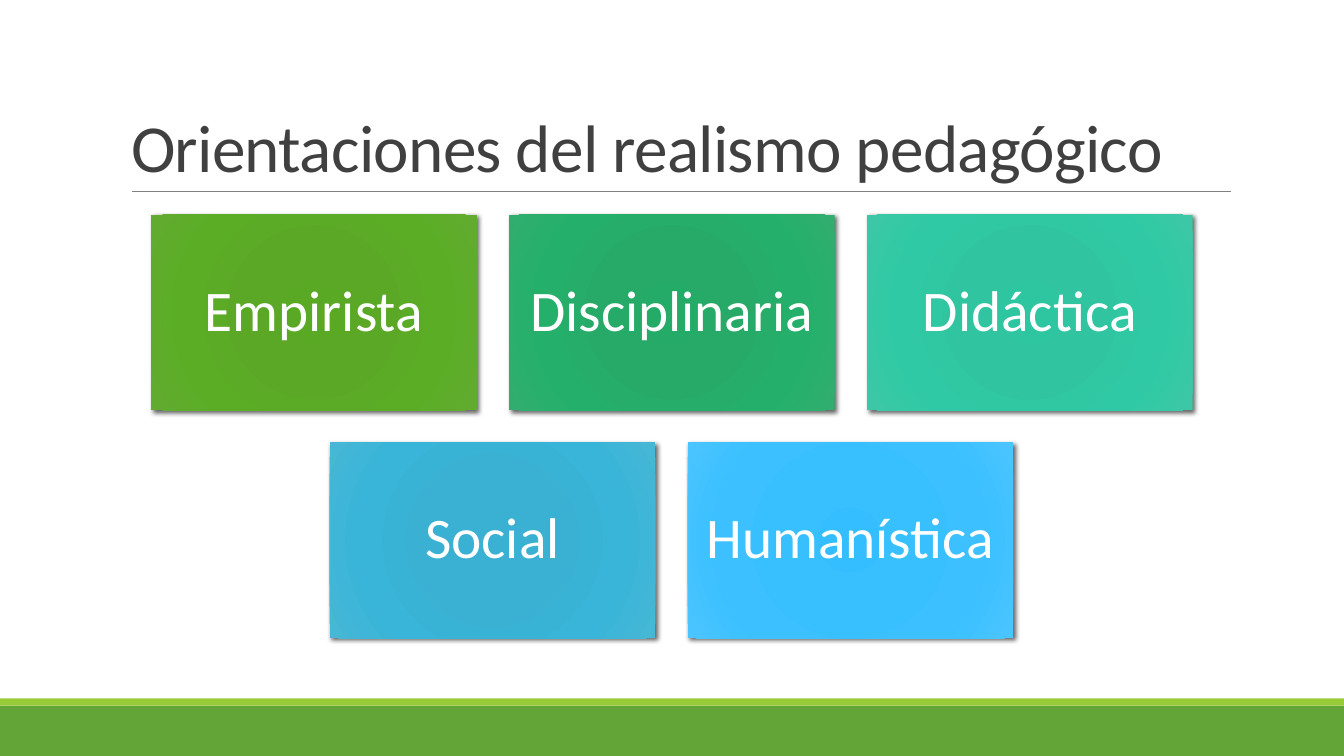
"""Build the slide on the orientations of pedagogical realism."""
from dataclasses import dataclass

import lxml.etree
import pptx
import pptx.dml.color
import pptx.enum.shapes
import pptx.enum.text
import pptx.oxml
import pptx.oxml.ns
import pptx.util

PX = 9144
PAGE_WIDTH, PAGE_HEIGHT = 1333, 750
CARD_WIDTH, CARD_HEIGHT, CARD_GAP, CARDS_TOP = 323, 194, 32, 213
STOP_POSITIONS = (0, 34, 70, 100)
CARD_ROWS = (
    (
        ("Empirista", ("59A924", "5BA827", "5BAD25", "62AB31")),
        ("Disciplinaria", ("24AB67", "27AA68", "24B06A", "31AD6F")),
        ("Didáctica", ("2EC5A1", "31C4A1", "2FCAA5", "3EC7A6")),
    ),
    (
        ("Social", ("37B1D3", "3AB1D2", "38B5D8", "48B7D5")),
        ("Humanística", ("34BEFF", "38BFFE", "3CC0FF", "4BC5FF")),
    ),
)


@dataclass(frozen=True)
class Theme:
    """Hold the colours and type sizes of the slide."""

    font: str = "Calibri"
    title_size: int = 48
    card_size: int = 41
    title: str = "404040"
    card_text: str = "FFFFFF"
    rule: str = "808080"
    band: str = "63A537"
    stripe: str = "99CB38"
    shadow: str = "000000"


THEME = Theme()


def px(*lengths):
    """Turn whole pixels into EMU."""
    return [pptx.util.Emu(length * PX) for length in lengths]


def rgb(code):
    """Return a colour from its hex code."""
    return pptx.dml.color.RGBColor.from_string(code)


def format_text(para, size, color, spacing):
    """Set the font and line spacing of a paragraph."""
    para.line_spacing = spacing
    para.font.name = THEME.font
    para.font.size = pptx.util.Pt(size)
    para.font.color.rgb = rgb(color)


def add_title(page, text):
    """Place and format the title placeholder."""
    title = page.shapes.title
    title.left, title.top, title.width, title.height = px(120, 31, 1100, 159)
    frame = title.text_frame
    frame.text = text
    frame.auto_size = pptx.enum.text.MSO_AUTO_SIZE.NONE
    frame.vertical_anchor = pptx.enum.text.MSO_ANCHOR.BOTTOM
    para = frame.paragraphs[0]
    para.alignment = pptx.enum.text.PP_ALIGN.LEFT
    format_text(para, THEME.title_size, THEME.title, 0.85)
    para.font._rPr.set("spc", "-50")


def add_rule(page, left, right, y):
    """Draw the thin horizontal line under the title."""
    straight = pptx.enum.shapes.MSO_CONNECTOR.STRAIGHT
    rule = page.shapes.add_connector(straight, *px(left, y, right, y))
    rule.line.color.rgb = rgb(THEME.rule)
    rule.line.width = pptx.util.Pt(0.5)
    properties = rule._element.spPr
    lxml.etree.SubElement(properties, pptx.oxml.ns.qn("a:effectLst"))


def add_box(page, left, top, width, height):
    """Add a plain rectangle without outline or shadow."""
    kind = pptx.enum.shapes.MSO_SHAPE.RECTANGLE
    box = page.shapes.add_shape(kind, *px(left, top, width, height))
    box.fill.background()
    box.line.fill.background()
    box.shadow.inherit = False
    return box


def add_band(page, top, height, color):
    """Add a solid band across the page."""
    band = add_box(page, 0, top, PAGE_WIDTH, height)
    band.fill.solid()
    band.fill.fore_color.rgb = rgb(color)


def set_glow_fill(box, colors):
    """Fill a box with a circular gradient from its centre."""
    stops = "".join(
        f'<a:gs pos="{position * 1000}"><a:srgbClr val="{color}"/></a:gs>'
        for position, color in zip(STOP_POSITIONS, colors)
    )
    gradient = pptx.oxml.parse_xml(
        f'<a:gradFill {pptx.oxml.ns.nsdecls("a")} rotWithShape="1">'
        f'<a:gsLst>{stops}</a:gsLst><a:path path="circle">'
        '<a:fillToRect l="100000" t="100000" r="100000" b="100000"/>'
        "</a:path></a:gradFill>"
    )
    properties = box._element.spPr
    properties.replace(properties.find(pptx.oxml.ns.qn("a:noFill")), gradient)


def set_shadow(box):
    """Give a box a soft shadow to the lower right."""
    effects = box._element.spPr.find(pptx.oxml.ns.qn("a:effectLst"))
    effects.append(pptx.oxml.parse_xml(
        f'<a:outerShdw {pptx.oxml.ns.nsdecls("a")} blurRad="{pptx.util.Pt(3.5)}" '
        f'dist="{pptx.util.Pt(2)}" dir="2700000" algn="br" rotWithShape="0">'
        f'<a:srgbClr val="{THEME.shadow}"><a:alpha val="60000"/></a:srgbClr>'
        "</a:outerShdw>"
    ))


def add_card(page, left, top, label, colors):
    """Add one labelled card."""
    card = add_box(page, left, top, CARD_WIDTH, CARD_HEIGHT)
    set_glow_fill(card, colors)
    set_shadow(card)
    frame = card.text_frame
    frame.text = label
    frame.word_wrap = True
    frame.vertical_anchor = pptx.enum.text.MSO_ANCHOR.MIDDLE
    (frame.margin_left, frame.margin_top,
     frame.margin_right, frame.margin_bottom) = px(17, 17, 17, 17)
    para = frame.paragraphs[0]
    para.alignment = pptx.enum.text.PP_ALIGN.CENTER
    format_text(para, THEME.card_size, THEME.card_text, 0.9)


def add_card_rows(page):
    """Lay out the cards in rows centred on the page."""
    for row, cards in enumerate(CARD_ROWS):
        top = CARDS_TOP + row * (CARD_HEIGHT + CARD_GAP)
        row_width = len(cards) * (CARD_WIDTH + CARD_GAP) - CARD_GAP
        start = (PAGE_WIDTH - row_width) // 2
        for column, (label, colors) in enumerate(cards):
            left = start + column * (CARD_WIDTH + CARD_GAP)
            add_card(page, left, top, label, colors)


def main():
    """Build and save the deck."""
    deck = pptx.Presentation()
    deck.slide_width, deck.slide_height = px(PAGE_WIDTH, PAGE_HEIGHT)
    page = deck.slides.add_slide(deck.slide_layouts.get_by_name("Title Only"))
    add_band(page, 700, 50, THEME.band)
    add_band(page, 693, 7, THEME.stripe)
    add_rule(page, 131, 1221, 190)
    add_title(page, "Orientaciones del realismo pedagógico")
    add_card_rows(page)
    deck.save("out.pptx")


if __name__ == "__main__":
    main()
